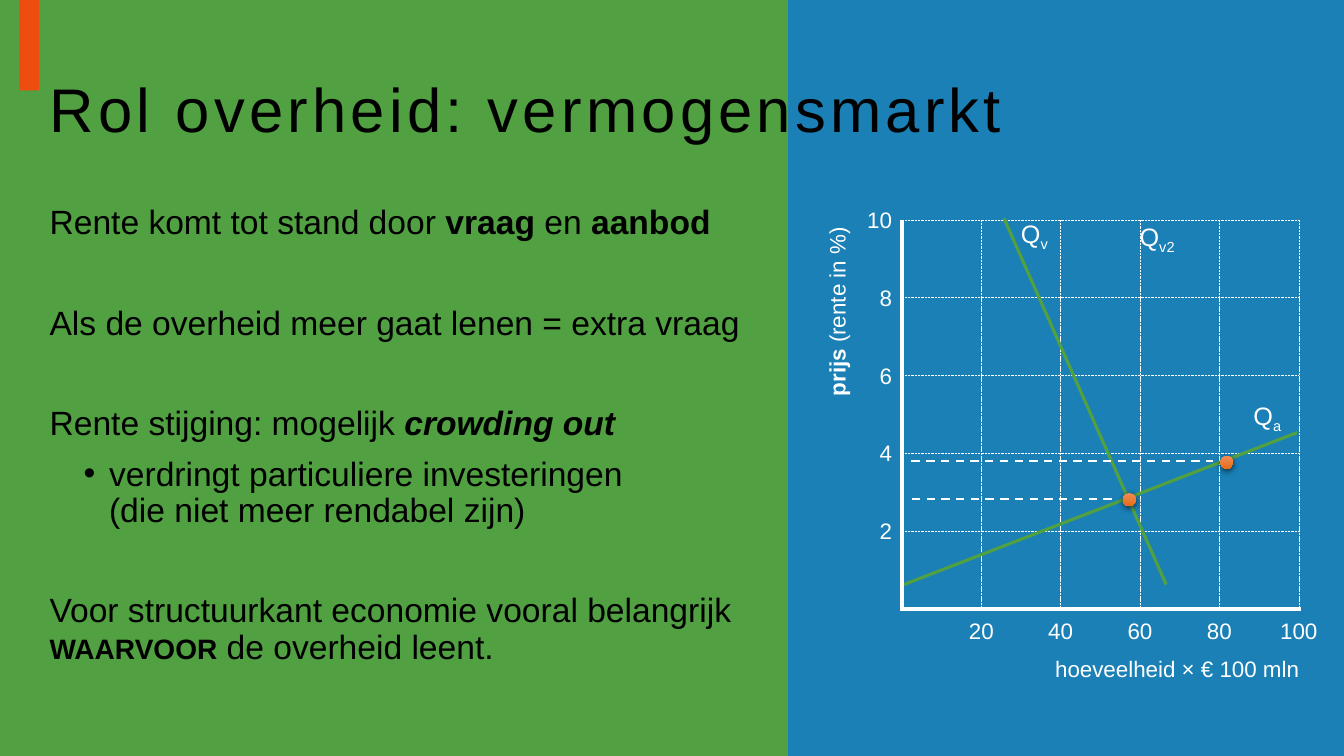
from lxml import etree
from pptx import Presentation
from pptx.dml.color import RGBColor
from pptx.enum.dml import MSO_LINE
from pptx.enum.shapes import MSO_CONNECTOR, MSO_SHAPE
from pptx.enum.text import MSO_ANCHOR, PP_ALIGN
from pptx.oxml.ns import qn
from pptx.util import Cm, Pt

RECTANGLE, OVAL = MSO_SHAPE.RECTANGLE, MSO_SHAPE.OVAL
STRAIGHT = MSO_CONNECTOR.STRAIGHT
DASH, FINE_DASH = MSO_LINE.DASH, MSO_LINE.SQUARE_DOT
LEFT, CENTER, RIGHT = PP_ALIGN.LEFT, PP_ALIGN.CENTER, PP_ALIGN.RIGHT
TOP, MIDDLE = MSO_ANCHOR.TOP, MSO_ANCHOR.MIDDLE

GREEN = RGBColor(0x51, 0xA0, 0x41)
BLUE = RGBColor(0x1A, 0x80, 0xB6)
RED = RGBColor(0xED, 0x4D, 0x0F)
POINT_LIGHT = RGBColor(0xF1, 0x8C, 0x57)
POINT_DARK = RGBColor(0xE5, 0x6C, 0x19)
BLACK = RGBColor(0, 0, 0)
WHITE = RGBColor(0xFF, 0xFF, 0xFF)

SLIDE_WIDTH, SLIDE_HEIGHT = 33.87, 19.05
PANEL_SPLIT = 19.86
AXIS_LEFT, AXIS_TOP = 22.73, 5.54
STEP_X, STEP_Y, STEPS = 2.0, 1.96, 5
AXIS_RIGHT = AXIS_LEFT + STEPS * STEP_X
AXIS_BOTTOM = AXIS_TOP + STEPS * STEP_Y
LABEL_WIDTH, LABEL_HEIGHT = 1.6, 0.94
POINT_SIZE = 0.33


class SlideBuilder:
    font = "Arial"

    def __init__(self, slide):
        self.slide = slide

    def shape(self, kind, left, top, width, height):
        shape = self.slide.shapes.add_shape(
            kind, Cm(left), Cm(top), Cm(width), Cm(height))
        shape.shadow.inherit = False
        shape.line.fill.background()
        return shape

    def panel(self, left, top, width, height, color):
        panel = self.shape(RECTANGLE, left, top, width, height)
        panel.fill.solid()
        panel.fill.fore_color.rgb = color

    def point(self, x, y):
        point = self.shape(OVAL, x - POINT_SIZE / 2, y - POINT_SIZE / 2,
                           POINT_SIZE, POINT_SIZE)
        point.fill.gradient()
        point.fill.gradient_angle = 270
        for stop, color in zip(point.fill.gradient_stops, (POINT_LIGHT, POINT_DARK)):
            stop.color.rgb = color
        effects = point._element.spPr.find(qn("a:effectLst"))
        shadow = etree.SubElement(effects, qn("a:outerShdw"), blurRad=str(Pt(4.5)),
                                  dist=str(Pt(1.5)), dir="5400000", rotWithShape="0")
        color = etree.SubElement(shadow, qn("a:srgbClr"), val=str(BLACK))
        etree.SubElement(color, qn("a:alpha"), val="63000")

    def line(self, x1, y1, x2, y2, color, weight, dash=None):
        line = self.slide.shapes.add_connector(STRAIGHT, Cm(x1), Cm(y1), Cm(x2), Cm(y2))
        line.line.color.rgb = color
        line.line.width = Pt(weight)
        if dash is not None:
            line.line.dash_style = dash
        etree.SubElement(line._element.spPr, qn("a:effectLst"))

    def text_box(self, left, top, width, height, wrap=True, anchor=TOP, rotation=0):
        box = self.slide.shapes.add_textbox(Cm(left), Cm(top), Cm(width), Cm(height))
        box.rotation = rotation
        box.text_frame.word_wrap = wrap
        box.text_frame.vertical_anchor = anchor
        return box.text_frame

    def run(self, paragraph, text, size, color, bold=False, italic=False):
        run = paragraph.add_run()
        run.text = text
        run.font.name = self.font
        run.font.size = Pt(size)
        run.font.color.rgb = color
        run.font.bold = bold
        run.font.italic = italic
        return run

    def label(self, text, left, top, width, align=LEFT):
        frame = self.text_box(left, top, width, LABEL_HEIGHT, wrap=False)
        paragraph = frame.paragraphs[0]
        paragraph.alignment = align
        self.run(paragraph, text, 16, WHITE)

    def curve_label(self, subscript, left, top, width):
        frame = self.text_box(left, top, width, 1.02, wrap=False)
        paragraph = frame.paragraphs[0]
        self.run(paragraph, "Q", 18, WHITE)
        run = self.run(paragraph, subscript, 18, WHITE)
        run.font._element.set("baseline", "-25000")

    def title(self, text):
        frame = self.text_box(1, 1, 32.03, 3.68, anchor=MIDDLE)
        paragraph = frame.paragraphs[0]
        paragraph.line_spacing = 0.9
        run = self.run(paragraph, text, 44, BLACK)
        run.font._element.set("spc", "300")

    def body_paragraph(self, frame, first, space_before):
        paragraph = frame.paragraphs[0] if first else frame.add_paragraph()
        paragraph.line_spacing = 0.9
        paragraph.space_before = Pt(space_before)
        return paragraph

    def bullet(self, paragraph):
        properties = paragraph._p.get_or_add_pPr()
        properties.set("marL", str(Cm(1.5)))
        properties.set("indent", str(Cm(-0.64)))
        etree.SubElement(properties, qn("a:buFont"), typeface=self.font)
        etree.SubElement(properties, qn("a:buChar"), char="•")


def add_body(builder):
    frame = builder.text_box(1, 5.05, 18.14, 12.09)
    statements = [
        (10, [("Rente komt tot stand door ", 24, False, False),
              ("vraag", 24, True, False),
              (" en ", 24, False, False),
              ("aanbod", 24, True, False)]),
        (46, [("Als de overheid meer gaat lenen = extra vraag", 24, False, False)]),
        (46, [("Rente stijging: mogelijk ", 24, False, False),
              ("crowding out", 24, True, True)]),
        (10, ["verdringt particuliere investeringen", "(die niet meer rendabel zijn)"]),
        (46, [("Voor structuurkant economie vooral belangrijk ", 24, False, False),
              ("WAARVOOR", 20, True, False),
              (" de overheid leent.", 24, False, False)]),
    ]
    for index, (space_before, parts) in enumerate(statements):
        paragraph = builder.body_paragraph(frame, index == 0, space_before)
        if isinstance(parts[0], str):
            builder.bullet(paragraph)
            builder.run(paragraph, parts[0], 24, BLACK)
            paragraph.add_line_break()
            builder.run(paragraph, parts[1], 24, BLACK)
            continue
        for text, size, bold, italic in parts:
            builder.run(paragraph, text, size, BLACK, bold, italic)


def add_graph(builder):
    for step in range(STEPS):
        y = AXIS_TOP + step * STEP_Y
        x = AXIS_LEFT + (step + 1) * STEP_X
        builder.line(AXIS_LEFT, y, AXIS_RIGHT, y, WHITE, 0.25, FINE_DASH)
        builder.line(x, AXIS_TOP, x, AXIS_BOTTOM, WHITE, 0.25, FINE_DASH)
        builder.label(str(10 - 2 * step), AXIS_LEFT - LABEL_WIDTH,
                      y - LABEL_HEIGHT / 2, LABEL_WIDTH, RIGHT)
        builder.label(str(20 * (step + 1)), x - LABEL_WIDTH / 2,
                      AXIS_BOTTOM + 0.08, LABEL_WIDTH, CENTER)

    builder.label("hoeveelheid × € 100 mln", 26.34, 16.38, 6.73)
    price = builder.text_box(18.67, 7.34, 4.85, LABEL_HEIGHT, wrap=False, rotation=270)
    builder.run(price.paragraphs[0], "prijs", 16, WHITE, bold=True)
    builder.run(price.paragraphs[0], " (rente in %)", 16, WHITE)

    builder.line(25.3, 5.5, 29.39, 14.73, GREEN, 2.25)
    builder.line(22.78, 14.73, 32.69, 10.9, GREEN, 2.25)
    builder.line(22.98, 12.58, 28.17, 12.58, WHITE, 1.5, DASH)
    builder.line(22.97, 11.61, 30.58, 11.61, WHITE, 1.5, DASH)
    builder.line(AXIS_LEFT, AXIS_TOP, AXIS_LEFT, AXIS_BOTTOM, WHITE, 3)
    builder.line(AXIS_RIGHT + 0.05, AXIS_BOTTOM, AXIS_LEFT - 0.05, AXIS_BOTTOM, WHITE, 3)
    builder.curve_label("v", 25.48, 5.38, 1.22)
    builder.curve_label("v2", 28.47, 5.44, 1.47)
    builder.curve_label("a", 31.34, 9.96, 1.24)
    builder.point(28.46, 12.59)
    builder.point(30.92, 11.65)


def main():
    presentation = Presentation()
    presentation.slide_width = Cm(SLIDE_WIDTH)
    presentation.slide_height = Cm(SLIDE_HEIGHT)
    builder = SlideBuilder(presentation.slides.add_slide(presentation.slide_layouts[6]))
    builder.panel(0, 0, PANEL_SPLIT, SLIDE_HEIGHT, GREEN)
    builder.panel(PANEL_SPLIT, 0, SLIDE_WIDTH - PANEL_SPLIT, SLIDE_HEIGHT, BLUE)
    builder.panel(0.49, 0, 0.49, 2.28, RED)
    builder.title("Rol overheid: vermogensmarkt")
    add_body(builder)
    add_graph(builder)
    presentation.save("out.pptx")


if __name__ == "__main__":
    main()
